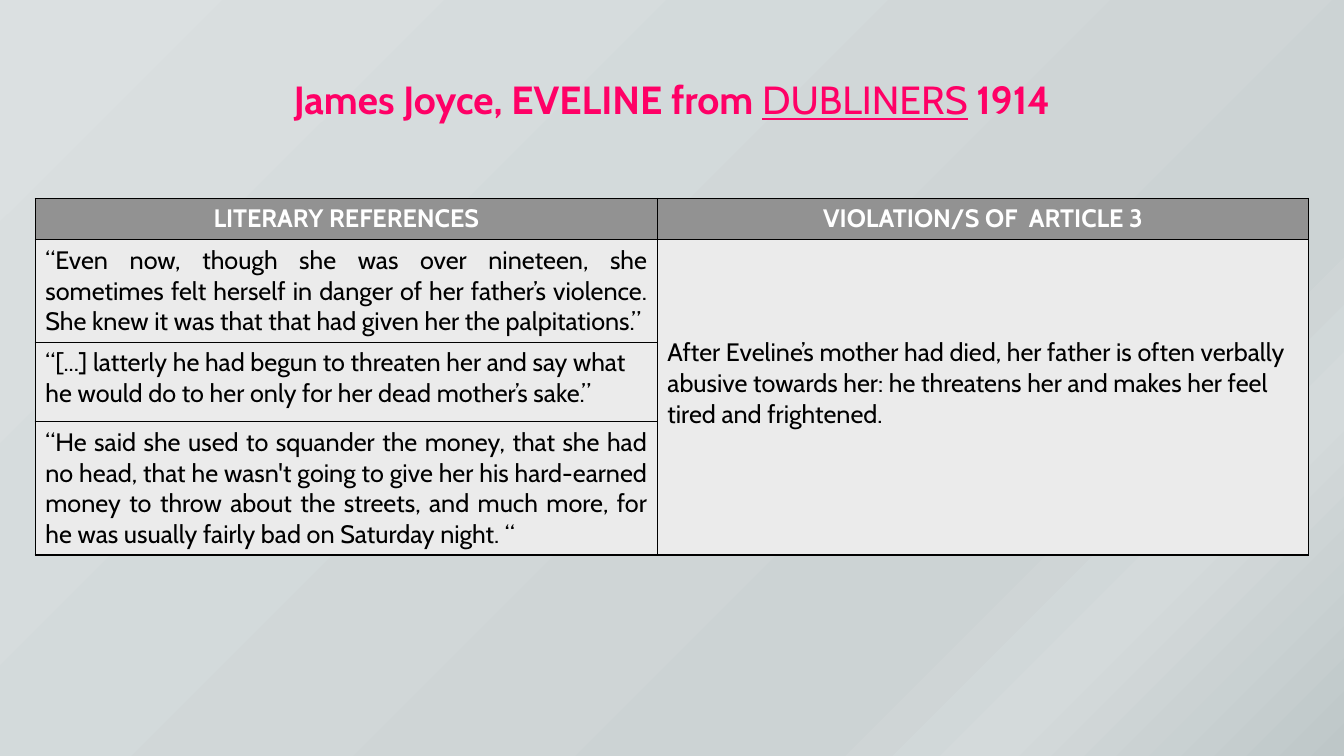
import copy
from typing import NamedTuple, Optional

import pptx
import pptx.dml.color
import pptx.enum.text
import pptx.oxml
import pptx.oxml.ns
import pptx.util
from pptx.util import Inches

COLORS = {
    "title": "FF0066",
    "header_text": "FFFFFF",
    "header_fill": "929292",
    "body_text": "000000",
    "body_fill": "EBEBEB",
    "border": "000000",
}
BACKGROUND = [(0, "DBE0E1"), (0.74, "CCD3D4"), (0.83, "D4DADB"), (1, "BEC7C8")]
FONT = "Cabin"
LEFT, WIDTH = 0.35, 12.63
COL_WIDTHS = [6.17, 6.46]
ROW_HEIGHTS = [0.41, 1.01, 0.79, 1.32]

ALIGN = pptx.enum.text.PP_ALIGN
ANCHOR = pptx.enum.text.MSO_ANCHOR


class Cell(NamedTuple):
    row: int
    col: int
    text: str
    align: pptx.enum.text.PP_ALIGN
    last_row: Optional[int] = None


class TitlePart(NamedTuple):
    text: str
    underlined: bool = False


TITLE = [
    TitlePart("James Joyce, EVELINE from "),
    TitlePart("DUBLINERS", underlined=True),
    TitlePart(" 1914"),
]

CELLS = [
    Cell(0, 0, "LITERARY REFERENCES", ALIGN.CENTER),
    Cell(0, 1, "VIOLATION/S OF  ARTICLE 3", ALIGN.CENTER),
    Cell(1, 0, "“Even now, though she was over nineteen, she sometimes felt herself "
         "in danger of her father’s violence. She knew it was that that had given "
         "her the palpitations.”", ALIGN.JUSTIFY),
    Cell(2, 0, "“[...] latterly he had begun to threaten her and say what he would do "
         "to her only for her dead mother’s sake.”", ALIGN.LEFT),
    Cell(3, 0, "“He said she used to squander the money, that she had no head, that he "
         "wasn't going to give her his hard-earned money to throw about the streets, "
         "and much more, for he was usually fairly bad on Saturday night. “",
         ALIGN.JUSTIFY),
    Cell(1, 1, "After Eveline’s mother had died, her father is often verbally abusive "
         "towards her: he threatens her and makes her feel tired and frightened.",
         ALIGN.LEFT, last_row=3),
]


def rgb(value: str) -> pptx.dml.color.RGBColor:
    return pptx.dml.color.RGBColor.from_string(value)


def format_run(r, size: int, color: str, bold: bool) -> None:
    r.font.name = FONT
    r.font.size = pptx.util.Pt(size)
    r.font.bold = bold
    r.font.color.rgb = rgb(COLORS[color])


def paint_background(s) -> None:
    fill = s.background.fill
    fill.gradient()
    fill.gradient_angle = 315  # counter-clockwise: top left to bottom right
    stops = fill.gradient_stops
    gs_list = s.background._cSld.find(".//" + pptx.oxml.ns.qn("a:gsLst"))
    for _ in range(len(BACKGROUND) - len(stops)):
        gs_list.append(copy.deepcopy(gs_list[0]))
    for stop, (position, color) in zip(fill.gradient_stops, BACKGROUND):
        stop.position = position
        stop.color.rgb = rgb(color)


def add_title(s) -> None:
    sp = s.shapes.add_textbox(Inches(LEFT), Inches(0.7), Inches(WIDTH), Inches(0.57))
    tf = sp.text_frame
    tf.word_wrap = True
    p = tf.paragraphs[0]
    p.alignment = ALIGN.CENTER
    for part in TITLE:
        r = p.add_run()
        r.text = part.text
        format_run(r, 28, "title", bold=not part.underlined)
        r.font.underline = part.underlined


def add_borders(cell) -> None:
    tc_pr = cell._tc.get_or_add_tcPr()
    for i, side in enumerate(("lnL", "lnR", "lnT", "lnB")):
        tc_pr.insert(i, pptx.oxml.parse_xml(
            f'<a:{side} {pptx.oxml.ns.nsdecls("a")} w="{pptx.util.Pt(1)}">'
            f'<a:solidFill><a:srgbClr val="{COLORS["border"]}"/></a:solidFill>'
            f'</a:{side}>'))


def add_references_table(s) -> None:
    table = s.shapes.add_table(
        len(ROW_HEIGHTS), len(COL_WIDTHS), Inches(LEFT), Inches(1.97),
        Inches(WIDTH), Inches(sum(ROW_HEIGHTS))).table
    table.horz_banding = False
    for column, width in zip(table.columns, COL_WIDTHS):
        column.width = Inches(width)
    for row, height in zip(table.rows, ROW_HEIGHTS):
        row.height = Inches(height)

    # Fills and borders
    for i, row in enumerate(table.rows):
        for cell in row.cells:
            cell.fill.solid()
            cell.fill.fore_color.rgb = rgb(COLORS["body_fill" if i else "header_fill"])
            add_borders(cell)

    # Cell text
    for item in CELLS:
        cell = table.cell(item.row, item.col)
        if item.last_row is not None:
            cell.merge(table.cell(item.last_row, item.col))
            cell.vertical_anchor = ANCHOR.MIDDLE
            cell.margin_bottom = Inches(0.33)
        cell.text_frame.text = item.text
        p = cell.text_frame.paragraphs[0]
        p.alignment = item.align
        header = item.row == 0
        format_run(p.runs[0], 18, "header_text" if header else "body_text", bold=header)


def main() -> None:
    prs = pptx.Presentation()
    prs.slide_width, prs.slide_height = Inches(13.33), Inches(7.5)
    s = prs.slides.add_slide(prs.slide_layouts[6])
    paint_background(s)
    add_references_table(s)
    add_title(s)
    prs.save("out.pptx")


if __name__ == "__main__":
    main()
